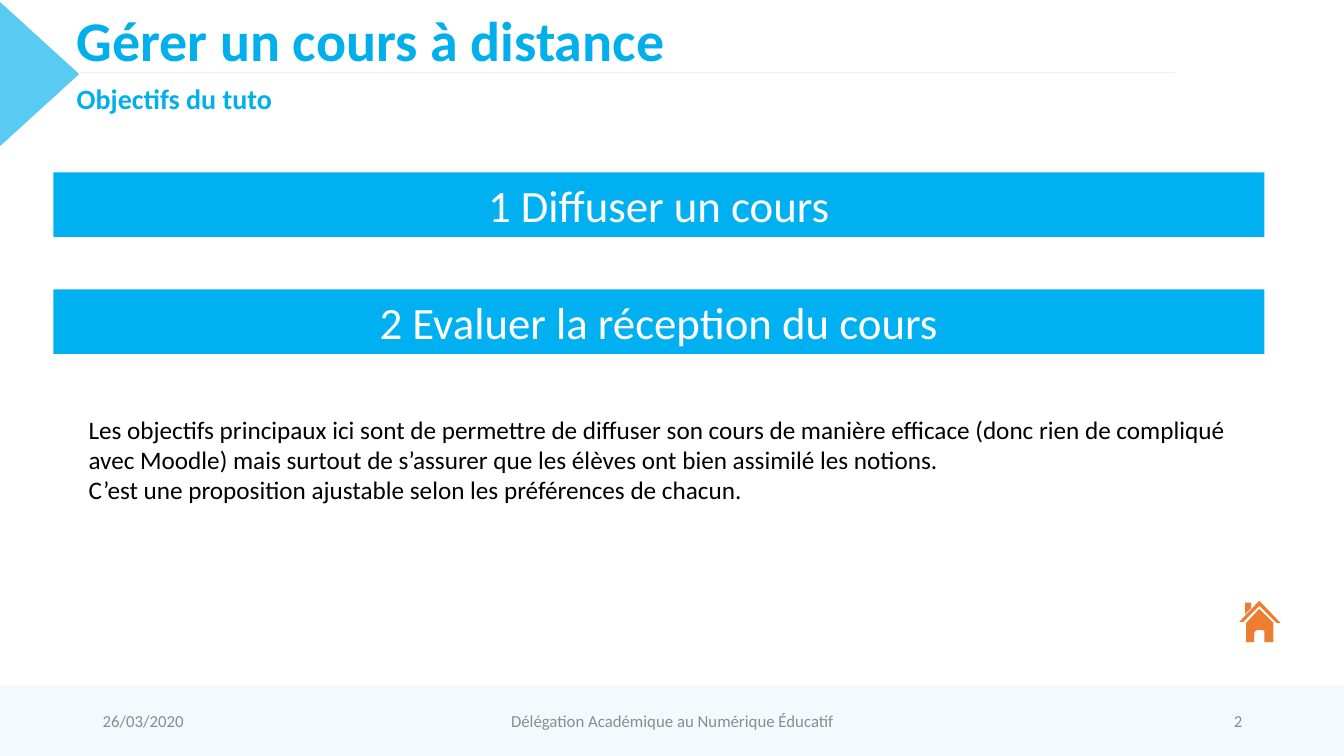
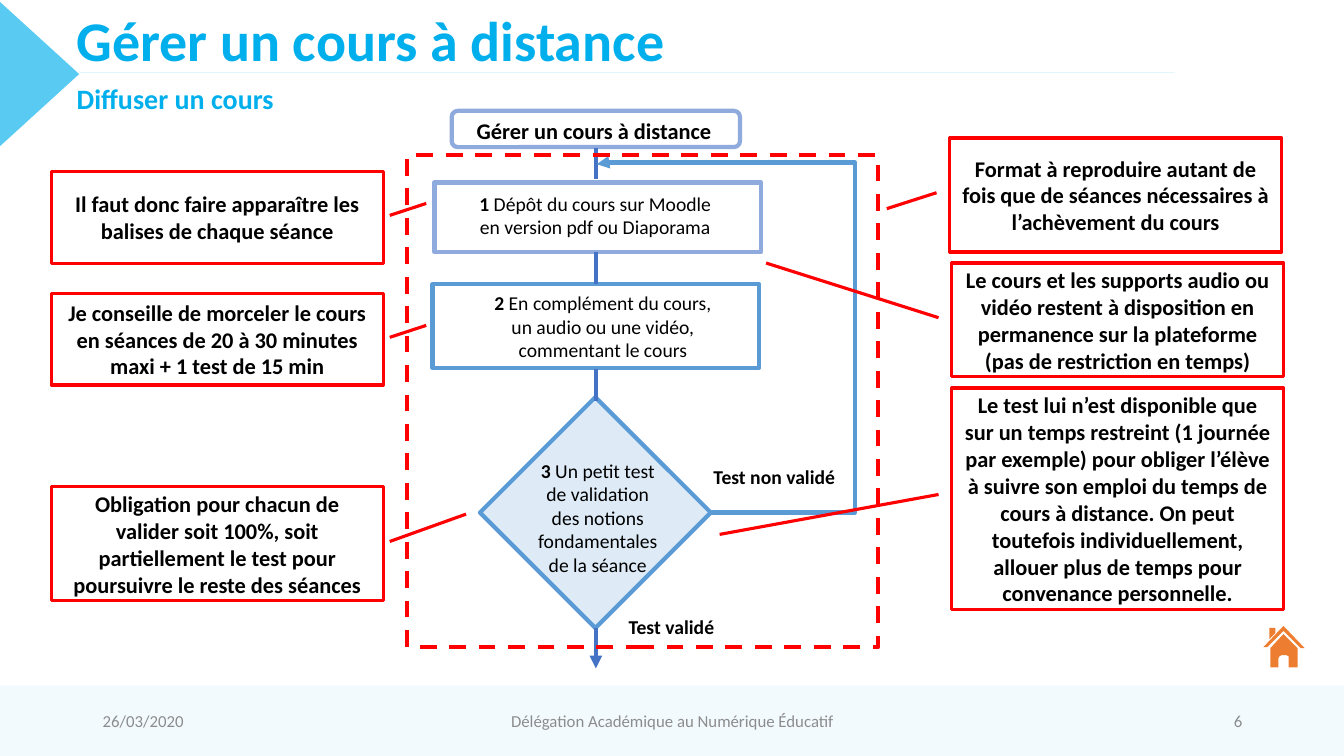
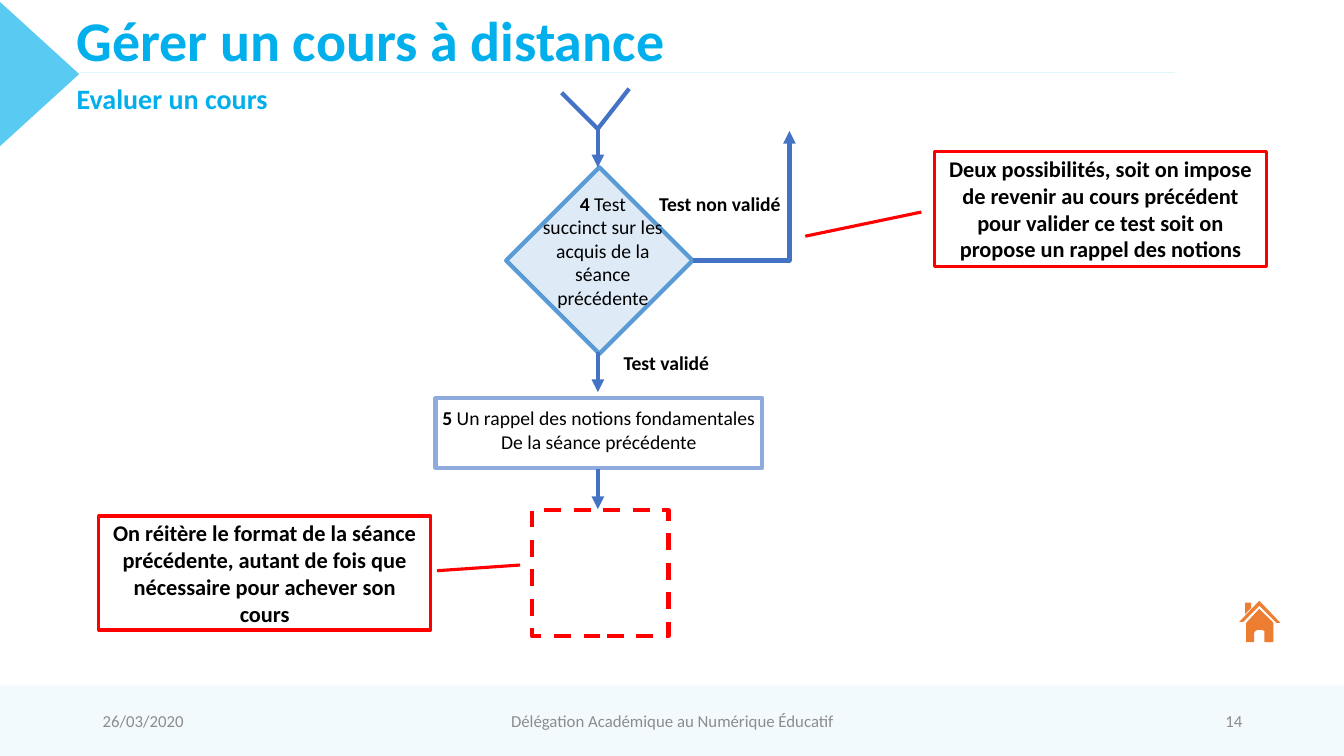
from pptx import Presentation
from pptx.dml.color import RGBColor
from pptx.enum.dml import MSO_LINE
from pptx.enum.shapes import MSO_CONNECTOR, MSO_SHAPE
from pptx.enum.text import MSO_ANCHOR, MSO_AUTO_SIZE, PP_ALIGN
from pptx.oxml.ns import qn
from pptx.util import Inches, Pt
from lxml.etree import SubElement

FONT = "Calibri"
TITLE_BLUE = RGBColor(0x00, 0xAF, 0xEC)
BAND_BLUE = RGBColor(0x00, 0xB0, 0xF0)
ARROW_BLUE = RGBColor(0x44, 0x72, 0xC4)
FRAME_BLUE = RGBColor(0x5B, 0x9B, 0xD5)
SOFT_BLUE = RGBColor(0x8F, 0xAA, 0xDC)
PALE_BLUE = RGBColor(0xDE, 0xEB, 0xF7)
RED = RGBColor(0xFF, 0x00, 0x00)
ORANGE = RGBColor(0xED, 0x7D, 0x31)
GREY = RGBColor(0x8C, 0x8C, 0x8C)
BLACK = RGBColor(0x00, 0x00, 0x00)
WHITE = RGBColor(0xFF, 0xFF, 0xFF)

NOTE_WIDTH = 3.29
HOME = (12.29, 5.96)
# Contours of the home icon, in hundredths of an inch
HOME_CONTOURS = (
    [(20, 8), (34, 22), (34, 41), (25, 41), (25, 32), (25, 30), (23, 29),
     (18, 29), (16, 30), (15, 32), (15, 41), (7, 41), (7, 22)],
    [(6, 2), (12, 2), (12, 7), (6, 13)],
    [(20, 0), (41, 22), (37, 22), (20, 5), (4, 21), (0, 21)],
)


def inches(values):
    return [Inches(value) for value in values]


def format_paragraph(para, size, color=BLACK, bold=None, align=PP_ALIGN.LEFT):
    para.alignment = align
    para.font.name = FONT
    para.font.size = Pt(size)
    para.font.color.rgb = color
    para.font.bold = bold


def set_opacity(shape, percent):
    for color in shape.element.spPr.iter(qn("a:srgbClr")):
        SubElement(color, qn("a:alpha")).set("val", str(percent * 1000))


def add_box(slide, kind, at, fill=None, line=None, width=3, dashed=False):
    box = slide.shapes.add_shape(kind, *inches(at))
    box.shadow.inherit = False
    if fill is None:
        box.fill.background()
    else:
        box.fill.solid()
        box.fill.fore_color.rgb = fill
    if line is None:
        box.line.fill.background()
    else:
        box.line.color.rgb = line
        box.line.width = Pt(width)
    if dashed:
        box.line.dash_style = MSO_LINE.DASH
    return box


def add_text(slide, at, lines, size, color=BLACK, bold=None,
             align=PP_ALIGN.CENTER, wrap=False, anchor=MSO_ANCHOR.TOP):
    frame = slide.shapes.add_textbox(*inches(at)).text_frame
    frame.word_wrap = wrap
    frame.vertical_anchor = anchor
    frame.text = "\n".join(lines)
    for para in frame.paragraphs:
        format_paragraph(para, size, color, bold, align)
    return frame


def add_step_text(slide, at, number, lines, wrap=False):
    """Add centred lines, the first one led by a bold step number."""
    frame = add_text(slide, at, ["", *lines[1:]], 14, wrap=wrap)
    first = frame.paragraphs[0]
    number_span = first.add_run()
    number_span.text = number
    number_span.font.bold = True
    first.add_run().text = " " + lines[0]


def add_line(slide, start, end, color=ARROW_BLUE, width=3, arrow=False,
             kind=MSO_CONNECTOR.STRAIGHT):
    line = slide.shapes.add_connector(kind, *inches(start + end))
    line.line.color.rgb = color
    line.line.width = Pt(width)
    properties = line.element.spPr
    if arrow:
        tail = SubElement(properties.find(qn("a:ln")), qn("a:tailEnd"))
        tail.set("type", "triangle")
    SubElement(properties, qn("a:effectLst"))
    return line


def add_return_arrow(slide, diamond, start, end, color, preset, bends=()):
    """Add an elbow arrow leaving the right corner of a diamond."""
    arrow = add_line(slide, start, end, color, arrow=True, kind=MSO_CONNECTOR.ELBOW)
    arrow.begin_connect(diamond, 3)
    geometry = arrow.element.spPr.find(qn("a:prstGeom"))
    geometry.set("prst", preset)
    for index, bend in enumerate(bends, 1):
        guide = SubElement(geometry.find(qn("a:avLst")), qn("a:gd"))
        guide.set("name", f"adj{index}")
        guide.set("fmla", f"val {bend}")


def add_note(slide, left, top, height, pointer, text):
    """Add a red callout; pointer holds y and x of both ends of its line."""
    note = add_box(slide, MSO_SHAPE.LINE_CALLOUT_1, (left, top, NOTE_WIDTH, height),
                   WHITE, RED, 2.25)
    for index, value in enumerate(pointer):
        note.adjustments[index] = value
    note.text_frame.text = text
    format_paragraph(note.text_frame.paragraphs[0], 16, BLACK, True, PP_ALIGN.CENTER)


def add_diamond(slide, at):
    return add_box(slide, MSO_SHAPE.DIAMOND, at, PALE_BLUE, FRAME_BLUE)


def add_test_label(slide, at, text):
    add_text(slide, at, [text], 14, bold=True)


def add_home(slide, left, top):
    builder = None
    for contour in HOME_CONTOURS:
        if builder is None:
            builder = slide.shapes.build_freeform(*contour[0], scale=Inches(0.01))
        else:
            builder.move_to(*contour[0])
        builder.add_line_segments(contour[1:], close=True)
    home = builder.convert_to_shape(Inches(left), Inches(top))
    home.shadow.inherit = False
    home.fill.solid()
    home.fill.fore_color.rgb = ORANGE
    home.line.fill.background()


def prepare_layout(deck):
    """Place the layout's title and body, and give it the shared decoration."""
    layout = deck.slide_layouts[1]
    places = ((0.66, 0, 11.07, 1.45), (0.66, 0.76, 5.49, 0.44))
    for holder, place in zip(layout.placeholders, places):
        holder.left, holder.top, holder.width, holder.height = inches(place)
    return layout


def decorate_layout(layout, slide):
    """Draw the decoration on a slide, then move it to the layout."""
    band = add_box(slide, MSO_SHAPE.RECTANGLE, (0, 6.8, 13.33, 0.7), TITLE_BLUE)
    corner = add_box(slide, MSO_SHAPE.ISOSCELES_TRIANGLE, (-0.33, 0.34, 1.44, 0.79),
                     TITLE_BLUE)
    corner.rotation = 90
    rule = add_line(slide, (0.79, 0.72), (11.65, 0.72), TITLE_BLUE, 0.25)
    for shape, opacity in ((band, 5), (corner, 65), (rule, 35)):
        set_opacity(shape, opacity)
        layout.element.cSld.spTree.append(shape.element)


def fill_heading(holder, text, size):
    frame = holder.text_frame
    frame.text = text
    frame.auto_size = MSO_AUTO_SIZE.NONE
    frame.vertical_anchor = MSO_ANCHOR.TOP
    para = frame.paragraphs[0]
    properties = para._p.get_or_add_pPr()
    properties.set("marL", "0")
    properties.set("indent", "0")
    SubElement(properties, qn("a:buNone"))
    para.space_before = Pt(0)
    format_paragraph(para, size, TITLE_BLUE, True)


def start_slide(slide, subtitle, number, home=HOME):
    fill_heading(slide.shapes.title, "Gérer un cours à distance", 40)
    fill_heading(slide.placeholders[1], subtitle, 20)
    footers = (
        (0.92, 3, "26/03/2020", PP_ALIGN.LEFT),
        (9.42, 3, str(number), PP_ALIGN.RIGHT),
        (4.42, 4.5, "Délégation Académique au Numérique Éducatif", PP_ALIGN.CENTER),
    )
    for left, width, text, align in footers:
        add_text(slide, (left, 6.95, width, 0.4), [text], 12, GREY,
                 align=align, wrap=True, anchor=MSO_ANCHOR.MIDDLE)
    add_home(slide, *home)


def build_goals(slide):
    start_slide(slide, "Objectifs du tuto", 2)
    goals = ("1 Diffuser un cours", "2 Evaluer la réception du cours")
    for index, goal in enumerate(goals):
        band = add_box(slide, MSO_SHAPE.RECTANGLE,
                       (0.53, 1.71 + 1.16 * index, 12.01, 0.64), BAND_BLUE)
        band.text_frame.text = goal
        format_paragraph(band.text_frame.paragraphs[0], 32, WHITE, align=PP_ALIGN.CENTER)
    add_text(slide, (0.78, 4.06, 11.64, 1.01), [
        "Les objectifs principaux ici sont de permettre de diffuser son cours "
        "de manière efficace (donc rien de compliqué",
        "avec Moodle) mais surtout de s’assurer que les élèves ont bien assimilé les notions.",
        "C’est une proposition ajustable selon les préférences de chacun.",
    ], 18, align=PP_ALIGN.LEFT)


def build_delivery(slide):
    start_slide(slide, "Diffuser un cours", 6, (12.53, 6.21))
    axis = 5.91
    add_box(slide, MSO_SHAPE.ROUNDED_RECTANGLE, (4.48, 1.1, 2.86, 0.36), line=SOFT_BLUE)
    add_text(slide, (4.63, 1.11, 2.56, 0.37), ["Gérer un cours à distance"], 16,
             bold=True, align=PP_ALIGN.LEFT)
    add_box(slide, MSO_SHAPE.RECTANGLE, (4.31, 1.81, 3.24, 0.69), line=SOFT_BLUE)
    add_step_text(slide, (4.62, 1.85, 2.57, 0.57), "1",
                  ["Dépôt du cours sur Moodle", "en version pdf ou Diaporama"])
    add_box(slide, MSO_SHAPE.RECTANGLE, (4.29, 2.82, 3.24, 0.83), line=FRAME_BLUE)
    add_step_text(slide, (4.77, 2.84, 2.42, 0.81), "2",
                  ["En complément du cours,", "un audio ou une vidéo,", "commentant le cours"])
    diamond = add_diamond(slide, (4.76, 3.94, 2.29, 2.29))
    add_step_text(slide, (5.21, 4.5, 1.44, 1.28), "3",
                  ["Un petit test", "de validation", "des notions",
                   "fondamentales", "de la séance"])
    for top, bottom in ((1.47, 1.78), (2.5, 2.82), (3.66, 3.98)):
        add_line(slide, (axis, top), (axis, bottom))
    add_return_arrow(slide, diamond, (7.05, 5.08), (5.92, 1.63), FRAME_BLUE,
                     "bentConnector4", (-126600, 100500))
    add_test_label(slide, (6.97, 4.56, 1.42, 0.34), "Test non validé")
    add_line(slide, (axis, 6.23), (axis, 6.63), arrow=True)
    add_test_label(slide, (6.13, 6.05, 1.06, 0.34), "Test validé")
    add_box(slide, MSO_SHAPE.RECTANGLE, (4.04, 1.54, 4.67, 4.88), line=RED, dashed=True)

    left_start, right_start = (0.48, 1.02), (0.48, -0.04)
    notes = (
        (0.51, 1.7, 0.91, left_start + (0.35, 1.13),
         "Il faut donc faire apparaître les balises de chaque séance"),
        (0.51, 2.91, 0.91, left_start + (0.35, 1.13),
         "Je conseille de morceler le cours en séances de 20 à 30 minutes "
         "maxi + 1 test de 15 min"),
        (0.51, 4.83, 1.13, left_start + (0.24, 1.25),
         "Obligation pour chacun de valider soit 100%, soit partiellement le test "
         "pour poursuivre le reste des séances"),
        (9.42, 1.37, 1.13, right_start + (0.62, -0.19),
         "Format à reproduire autant de fois que de séances nécessaires "
         "à l’achèvement du cours"),
        (9.44, 2.61, 1.13, right_start + (0, -0.56),
         "Le cours et les supports audio ou vidéo restent à disposition en permanence "
         "sur la plateforme (pas de restriction en temps)"),
        (9.44, 3.85, 2.2, right_start + (0.66, -0.7),
         "Le test lui n’est disponible que sur un temps restreint (1 journée par exemple) "
         "pour obliger l’élève à suivre son emploi du temps de cours à distance. On peut "
         "toutefois individuellement, allouer plus de temps pour convenance personnelle."),
    )
    for note in notes:
        add_note(slide, *note)


def build_assessment(slide):
    start_slide(slide, "Evaluer un cours", 14)
    axis = 5.93
    add_box(slide, MSO_SHAPE.RECTANGLE, (4.32, 3.95, 3.24, 0.69), line=SOFT_BLUE)
    add_step_text(slide, (4.27, 3.98, 3.34, 0.57), "5",
                  ["Un rappel des notions fondamentales", "De la séance précédente"])
    diamond = add_diamond(slide, (5.02, 1.66, 1.85, 1.85))
    add_step_text(slide, (5.21, 1.85, 1.54, 1.28), "4",
                  ["Test", "succinct sur les acquis de la séance", "précédente"], wrap=True)
    add_note(slide, 0.98, 5.12, 1.13, (0.48, 1.02, 0.43, 1.27),
             "On réitère le format de la séance précédente, autant de fois que nécessaire "
             "pour achever son cours")
    add_return_arrow(slide, diamond, (6.87, 2.58), (7.83, 1.3), ARROW_BLUE, "bentConnector2")
    add_test_label(slide, (6.43, 1.85, 1.42, 0.34), "Test non validé")
    add_test_label(slide, (6.08, 3.43, 1.06, 0.34), "Test validé")
    add_box(slide, MSO_SHAPE.RECTANGLE, (5.28, 5.06, 1.35, 1.25), line=RED, dashed=True)
    add_line(slide, (5.57, 0.92), (axis, 1.28))
    add_line(slide, (5.92, 1.29), (6.24, 0.88))
    for top in (1.26, 3.49, 4.65):
        add_line(slide, (axis, top), (axis, top + 0.4), arrow=True)
    add_note(slide, 9.27, 1.5, 1.14, (0.53, -0.04, 0.74, -0.39),
             "Deux possibilités, soit on impose de revenir au cours précédent pour valider "
             "ce test soit on propose un rappel des notions")


def main():
    deck = Presentation()
    deck.slide_width, deck.slide_height = inches((13.33, 7.5))
    layout = prepare_layout(deck)
    slides = [deck.slides.add_slide(layout) for _ in range(3)]
    decorate_layout(layout, slides[0])
    for build, slide in zip((build_goals, build_delivery, build_assessment), slides):
        build(slide)
    deck.save("out.pptx")


if __name__ == "__main__":
    main()
